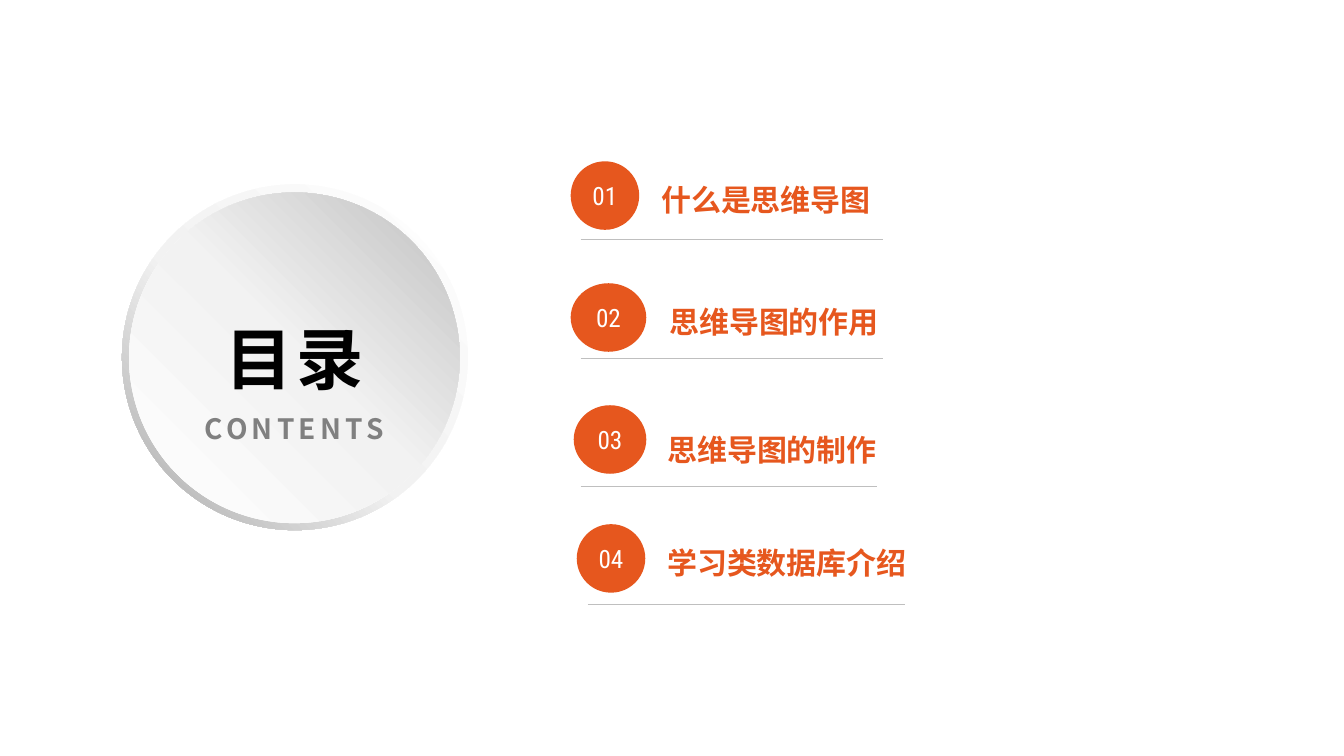
from copy import deepcopy

from lxml import etree
from pptx import Presentation
from pptx.dml.color import RGBColor
from pptx.enum.shapes import MSO_CONNECTOR, MSO_SHAPE
from pptx.enum.text import MSO_ANCHOR, MSO_AUTO_SIZE, PP_ALIGN
from pptx.oxml.ns import qn
from pptx.util import Inches, Pt

OVAL, DONUT = MSO_SHAPE.OVAL, MSO_SHAPE.DONUT
STRAIGHT = MSO_CONNECTOR.STRAIGHT
TOP, MIDDLE = MSO_ANCHOR.TOP, MSO_ANCHOR.MIDDLE
LEFT, CENTER = PP_ALIGN.LEFT, PP_ALIGN.CENTER
COLORS = {
    "orange": "E6571E",
    "white": "FFFFFF",
    "black": "000000",
    "pale": "F2F2F2",
    "silver": "BFBFBF",
    "steel": "A6A6A6",
    "gray": "808080",
}
CJK_FONT = "Noto Sans CJK SC"


def color(name):
    return RGBColor.from_string(COLORS[name])


def write(box, text, size, font, tint, align=CENTER, anchor=MIDDLE, bold=False, spacing=0):
    """Put one formatted run into the box; spacing is in points."""
    frame = box.text_frame
    frame.vertical_anchor = anchor
    para = frame.paragraphs[0]
    para.alignment = align
    span = para.add_run()
    span.text = text
    span.font.size = Pt(size)
    span.font.name = font
    span.font.bold = bold
    span.font.color.rgb = color(tint)
    props = span.font._element
    etree.SubElement(props, qn("a:ea")).set("typeface", CJK_FONT)
    if spacing:
        props.set("spc", str(spacing * 100))
    return para


deck = Presentation()
deck.slide_width, deck.slide_height = Inches(13.33), Inches(7.5)
page = deck.slides.add_slide(deck.slide_layouts[5])
shapes = page.shapes

# Round title plate: shaded rim around a shaded disc
plate = [
    (DONUT, 1.21, 1.83, 3.43, 225, [(0, "white"), (0.55, "pale"), (1, "steel")]),
    (OVAL, 1.28, 1.91, 3.28, 45, [(0, "white"), (0.51, "pale"), (1, "silver")]),
]
for kind, left, top, size, angle, stops in plate:
    disc = shapes.add_shape(kind, Inches(left), Inches(top), Inches(size), Inches(size))
    disc.shadow.inherit = False
    disc.line.fill.background()
    if kind == DONUT:
        disc.adjustments[0] = 0.049
    disc.fill.gradient()
    disc.fill.gradient_angle = angle
    stop_list = disc.element.spPr.find(qn("a:gradFill")).find(qn("a:gsLst"))
    stop_list.append(deepcopy(stop_list[0]))
    for stop, (position, tint) in zip(disc.fill.gradient_stops, stops):
        stop.position = position
        stop.color.rgb = color(tint)

title = shapes.title
title.left, title.top, title.width, title.height = (
    Inches(1.76), Inches(3.05), Inches(2.32), Inches(1))
title.text_frame.auto_size = MSO_AUTO_SIZE.NONE
write(title, "目录", 48, "Roboto", "black", bold=True, spacing=3)
shapes.element.append(title.element)  # bring the title in front of the disc

subtitle = shapes.add_textbox(Inches(1.9), Inches(4.03), Inches(2.04), Inches(0.44))
subtitle.text_frame.word_wrap = False
write(subtitle, "CONTENTS", 20, CJK_FONT, "gray", anchor=TOP, bold=True, spacing=3)

# heading, badge (left, top, width), heading box (left, top, width),
# rule (left, right, height on the page), line spacing
chapters = [
    ("什么是思维导图", (5.66, 1.6, 0.68), (6.46, 1.68, 2.3), (5.76, 8.76, 2.37), 1.2),
    ("思维导图的作用", (5.66, 2.81, 0.75), (6.54, 2.96, 2.34), (5.76, 8.76, 3.55), 1),
    ("思维导图的制作", (5.69, 4.02, 0.72), (6.52, 4.23, 2.35), (5.76, 8.7, 4.82), 1),
    ("学习类数据库介绍", (5.72, 5.2, 0.68), (6.52, 5.35, 2.6), (5.83, 8.98, 5.99), 1),
]
for number, (text, badge_at, heading_at, rule_at, line_spacing) in enumerate(chapters, 1):
    left, top, width = map(Inches, badge_at)
    badge = shapes.add_shape(OVAL, left, top, width, Inches(0.68))
    badge.shadow.inherit = False
    badge.fill.solid()
    badge.fill.fore_color.rgb = color("orange")
    badge.line.fill.background()
    write(badge, f"{number:02}", 18, "Roboto Condensed", "white")

    left, top, width = map(Inches, heading_at)
    heading = shapes.add_textbox(left, top, width, Inches(0.38))
    heading.text_frame.word_wrap = True
    para = write(heading, text, 21.4, CJK_FONT, "orange", LEFT, TOP, bold=True)
    para.line_spacing = line_spacing

    start, end, level = map(Inches, rule_at)
    rule = shapes.add_connector(STRAIGHT, start, level, end, level)
    rule.line.color.rgb = color("silver")
    rule.line.width = Pt(0.25)
    etree.SubElement(rule.element.spPr, qn("a:effectLst"))

deck.save("out.pptx")
